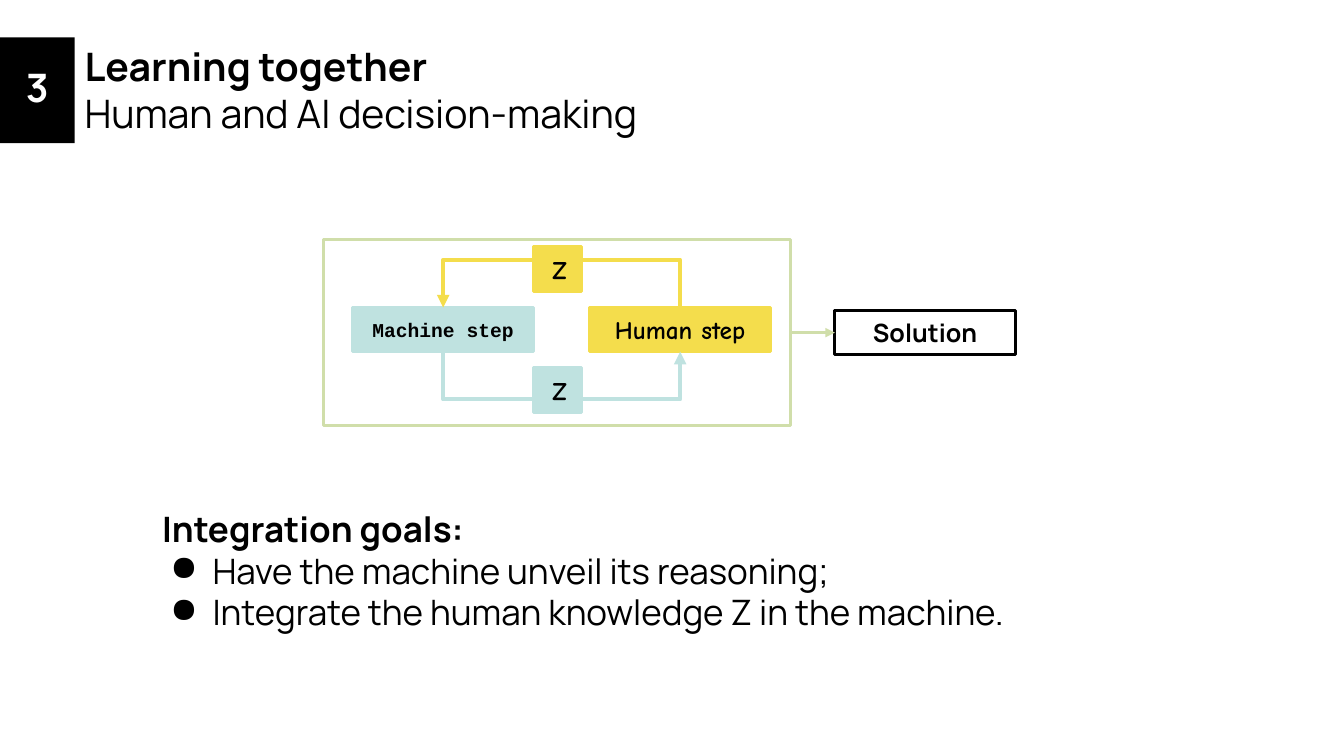
"""Build a slide on how human and AI steps learn together."""
from lxml import etree
from pptx import Presentation
from pptx import util as u
from pptx.dml.color import RGBColor
from pptx.enum import shapes, text
from pptx.oxml import ns

BLACK, WHITE, YELLOW, AQUA, GREEN = "000000", "FFFFFF", "F4DD4C", "BFE2E0", "D0DEAA"
color = RGBColor.from_string

deck = Presentation()
deck.slide_width, deck.slide_height = u.Inches(13.33), u.Inches(7.5)
slide = deck.slides.add_slide(deck.slide_layouts[6])


def write(holder, lines, size, font, ink=BLACK, align=text.PP_ALIGN.LEFT, inset=0.1):
    """Fill a text frame; the first line is bold, any others are plain."""
    frame = holder.text_frame
    frame.word_wrap = True
    frame.margin_left = frame.margin_right = u.Inches(0.1)
    frame.margin_top = frame.margin_bottom = u.Inches(inset)
    frame.text = "\n".join(lines)
    for row, paragraph in enumerate(frame.paragraphs):
        paragraph.alignment = align
        paragraph.font.size, paragraph.font.name = u.Pt(size), font
        paragraph.font.bold = row == 0
        paragraph.font.color.rgb = color(ink)
    return frame


def box(left, top, width, height, fill=None, line=None):
    """Add a rectangle measured in inches."""
    rect = slide.shapes.add_shape(shapes.MSO_SHAPE.RECTANGLE, *map(u.Inches, (left, top, width, height)))
    rect.shadow.inherit = False
    rect.text_frame.vertical_anchor = text.MSO_ANCHOR.MIDDLE
    if fill:
        rect.fill.solid()
        rect.fill.fore_color.rgb = color(fill)
    else:
        rect.fill.background()
    if line:
        rect.line.color.rgb = color(line)
        rect.line.width = u.Pt(2.25)
    else:
        rect.line.fill.background()
    return rect


goals = slide.shapes.add_textbox(*map(u.Inches, (1.51, 4.93, 10.31, 1.59)))
goals_frame = write(goals, ["Integration goals:", "Have the machine unveil its reasoning;",
                            "Integrate the human knowledge Z in the machine."], 25, "Manrope")
for goal in goals_frame.paragraphs[1:]:
    properties = goal._p.get_or_add_pPr()
    properties.set("marL", str(u.Inches(0.5)))
    properties.set("indent", str(u.Inches(-0.42)))
    etree.SubElement(properties, ns.qn("a:buChar"), char="●")
    properties.append(properties.find(ns.qn("a:defRPr")))

STEP_W, STEP_H, STEP_TOP = 1.79, 0.44, 3.05
MACHINE_LEFT, HUMAN_LEFT = 3.5, 5.85
SPAN = HUMAN_LEFT - MACHINE_LEFT
LOOP_MIDDLE = (MACHINE_LEFT + HUMAN_LEFT + STEP_W) / 2

loop_panel = box(3.21, 2.38, 4.63, 1.84, line=GREEN)
machine = box(MACHINE_LEFT, STEP_TOP, STEP_W, STEP_H, AQUA, AQUA)
human = box(HUMAN_LEFT, STEP_TOP, STEP_W, STEP_H, YELLOW, YELLOW)
solution = box(8.28, 3.08, STEP_W, STEP_H, line=BLACK)
for step, label, size, font in [(machine, "Machine step", 14, "Courier New"),
                                (human, "Human step", 18, "Comic Neue"),
                                (solution, "Solution", 18, "Manrope")]:
    write(step, [label], size, font, align=text.PP_ALIGN.CENTER)

STRAIGHT, ELBOW = shapes.MSO_CONNECTOR.STRAIGHT, shapes.MSO_CONNECTOR.ELBOW
THIN, BEND = 0.001, 0.4
for kind, start, start_side, end, end_side, ink, weight, arrow, bend in [
        (STRAIGHT, loop_panel, 3, solution, 1, GREEN, 2.25, "tailEnd", 0),
        (ELBOW, human, 2, machine, 2, AQUA, 3, "headEnd", BEND),
        (ELBOW, human, 0, machine, 0, YELLOW, 3, "tailEnd", -BEND)]:
    flow = slide.shapes.add_connector(kind, 0, 0, 0, 0)
    flow.begin_connect(start, start_side)
    flow.end_connect(end, end_side)
    flow.line.color.rgb, flow.line.width = color(ink), u.Pt(weight)
    etree.SubElement(flow.line._get_or_add_ln(), ns.qn("a:" + arrow), type="triangle")
    outline = flow._element.spPr
    etree.SubElement(outline, ns.qn("a:effectLst"))
    if bend:
        side_y = STEP_TOP + (STEP_H if bend > 0 else 0)
        flow.left, flow.top = u.Inches(LOOP_MIDDLE), u.Inches(side_y - SPAN / 2)
        flow.width, flow.height = u.Inches(THIN), u.Inches(SPAN)
        turn = outline.find(ns.qn("a:xfrm"))
        for flip in ("flipH", "flipV"):
            turn.attrib.pop(flip, None)
        turn.set("rot", str(90 * 60000))
        guides = outline.find(ns.qn("a:prstGeom")).find(ns.qn("a:avLst"))
        etree.SubElement(guides, ns.qn("a:gd"), name="adj1", fmla=f"val {round(bend / THIN * 100000)}")

title = slide.shapes.add_textbox(*map(u.Inches, (0.74, 0.37, 10.73, 1.04)))
write(title, ["Learning together", "Human and AI decision-making"], 28, "Manrope", inset=0.05)
number = box(0, 0.37, 0.74, 1.05, BLACK)
number_frame = write(number, ["3"], 28, "Manrope", WHITE, text.PP_ALIGN.CENTER, 0.05)
number_frame.paragraphs[0].line_spacing = 0.9

for knowledge_top, tint in [(2.45, YELLOW), (3.65, AQUA)]:
    knowledge = box(5.29, knowledge_top, 0.48, STEP_H, tint, tint)
    write(knowledge, [" Z"], 18, "Comic Neue")

deck.save("out.pptx")
